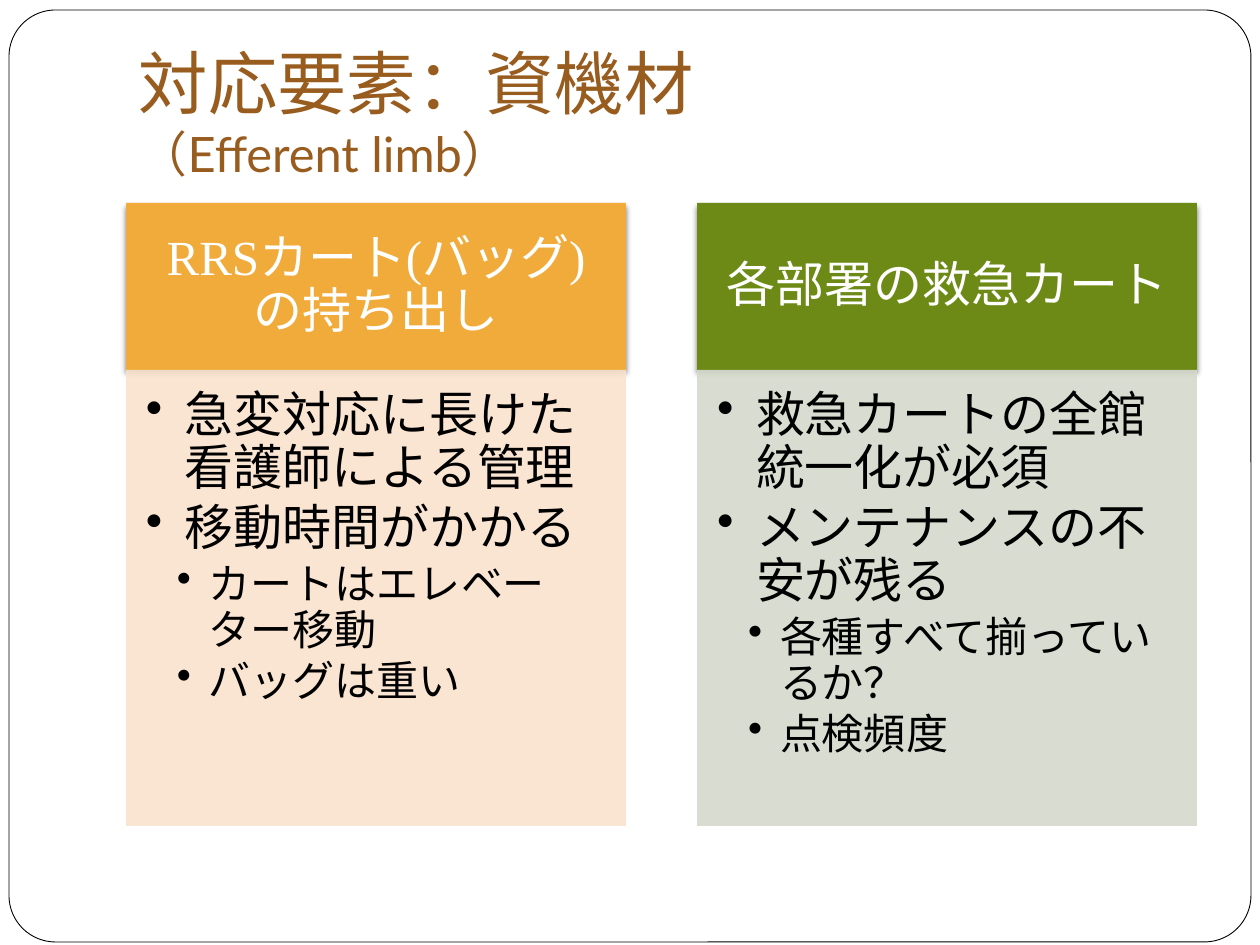
from lxml import etree
from pptx import Presentation
from pptx import util as u
from pptx.dml.color import RGBColor
from pptx.enum import shapes, text
from pptx.oxml import ns

EMU_PER_PX = 914400 / 126
BODY_FONT = "Times New Roman"
COLUMN_LEFT, COLUMN_STEP, COLUMN_WIDTH = 126, 571, 500
HEAD_TOP, HEAD_HEIGHT, BODY_HEIGHT = 203, 167, 456

COLUMNS = [
    ("RRSカート(バッグ)の持ち出し", "F1AB3B", "FAE2CE",
     [(0, "急変対応に長けた看護師による管理"), (0, "移動時間がかかる"),
      (1, "カートはエレベーター移動"), (1, "バッグは重い")]),
    ("各部署の救急カート", "6D8A16", "D5DACC",
     [(0, "救急カートの全館統一化が必須"), (0, "メンテナンスの不安が残る"),
      (1, "各種すべて揃っているか？"), (1, "点検頻度")]),
]
# Size in points, then left margin and bullet indent in px, by level
BULLET_LEVELS = [(28, 39, -39), (24, 63, -32)]


def px(length):
    return u.Emu(round(length * EMU_PER_PX))


def color(value):
    return RGBColor.from_string(value)


def sub(parent, tag, **attributes):
    """Append a DrawingML element with the given attributes."""
    values = {name: str(value) for name, value in attributes.items()}
    return etree.SubElement(parent, ns.qn(tag), values)


def add_span(para, wording, size, fill, font=BODY_FONT):
    span = para.add_run()
    span.text = wording
    span.font.size = u.Pt(size)
    span.font.name = font
    span.font.color.rgb = color(fill)


def set_frame(box, insets, anchor):
    """Set wrapping, anchor and the left, top, right, bottom insets in px."""
    frame = box.text_frame
    frame.word_wrap = True
    frame.auto_size = text.MSO_AUTO_SIZE.NONE
    frame.vertical_anchor = anchor
    (frame.margin_left, frame.margin_top,
     frame.margin_right, frame.margin_bottom) = map(px, insets)
    return frame


def add_box(page, left, top, width, height, fill,
            kind=shapes.MSO_SHAPE.RECTANGLE):
    box = page.shapes.add_shape(kind, px(left), px(top), px(width), px(height))
    box.shadow.inherit = False
    box.fill.solid()
    box.fill.fore_color.rgb = color(fill)
    box.line.fill.background()
    return box


def add_border(page):
    border = add_box(page, 9, 10, 1242, 932, "FFFFFF",
                     shapes.MSO_SHAPE.ROUNDED_RECTANGLE)
    border.adjustments[0] = 0.05
    border.line.color.rgb = color("000000")
    border.line.width = u.Pt(0.5)
    # The border lies behind the title
    page.shapes.title.element.addprevious(border.element)


def fill_title(page):
    title = page.shapes.title
    title.left, title.top, title.width, title.height = map(
        px, (126, 38, 1071, 157))
    frame = set_frame(title, (13, 6, 13, 13), text.MSO_ANCHOR.BOTTOM)
    para = frame.paragraphs[0]
    para.alignment = text.PP_ALIGN.LEFT
    add_span(para, "対応要素：資機材", 39.6, "975C1E", "Lato")
    para.add_line_break()
    add_span(para, "（Efferent limb）", 27.9, "975C1E", "Lato")


def add_shadow(box):
    effects = box.element.spPr.find(ns.qn("a:effectLst"))
    shadow = sub(effects, "a:outerShdw", blurRad=u.Pt(3), dist=u.Pt(2),
                 dir=90 * 60000, rotWithShape=0)
    sub(sub(shadow, "a:srgbClr", val="000000"), "a:alpha", val=50000)


def add_heading(page, left, wording, fill):
    box = add_box(page, left, HEAD_TOP, COLUMN_WIDTH, HEAD_HEIGHT, fill)
    add_shadow(box)
    frame = set_frame(box, (28, 15, 28, 15), text.MSO_ANCHOR.MIDDLE)
    para = frame.paragraphs[0]
    para.alignment = text.PP_ALIGN.CENTER
    para.line_spacing = 0.9
    add_span(para, wording, 28, "FFFFFF")


def format_bullet(para, level):
    size, margin, indent = BULLET_LEVELS[level]
    para.level = level
    para.alignment = text.PP_ALIGN.LEFT
    para.line_spacing = 0.9
    para.space_after = u.Pt(round(size * 0.15, 1))
    properties = para._p.get_or_add_pPr()
    properties.set("marL", str(px(margin)))
    properties.set("indent", str(px(indent)))
    sub(properties, "a:buChar", char="•")
    return size


def add_bullets(page, left, fill, points):
    box = add_box(page, left, HEAD_TOP + HEAD_HEIGHT, COLUMN_WIDTH,
                  BODY_HEIGHT, fill)
    fill_color = box.element.spPr.find(
        ns.qn("a:solidFill")).find(ns.qn("a:srgbClr"))
    sub(fill_color, "a:alpha", val=90000)
    frame = set_frame(box, (20, 20, 28, 30), text.MSO_ANCHOR.TOP)
    for index, (level, wording) in enumerate(points):
        para = frame.add_paragraph() if index else frame.paragraphs[0]
        size = format_bullet(para, level)
        add_span(para, wording, size, "000000")


def main():
    deck = Presentation()
    deck.slide_width, deck.slide_height = px(1260), px(945)
    page = deck.slides.add_slide(deck.slide_layouts.get_by_name("Title Only"))
    add_border(page)
    fill_title(page)
    for index, (heading, head_fill, body_fill, points) in enumerate(COLUMNS):
        left = COLUMN_LEFT + index * COLUMN_STEP
        add_heading(page, left, heading, head_fill)
        add_bullets(page, left, body_fill, points)
    deck.save("out.pptx")


if __name__ == "__main__":
    main()
